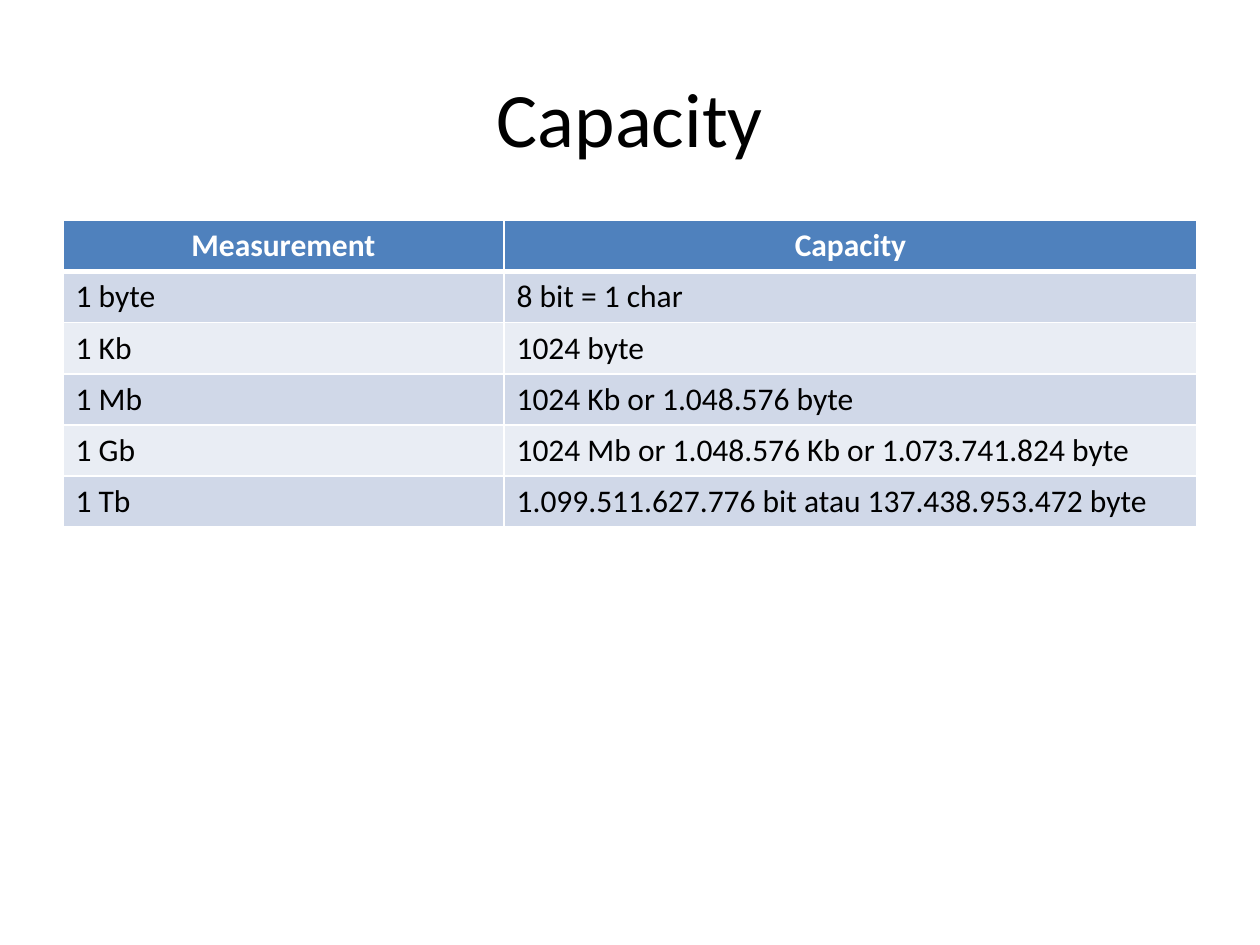
from lxml import etree
from pptx import Presentation
from pptx.dml.color import RGBColor
from pptx.enum import text as t
from pptx.oxml.ns import qn
from pptx.util import Pt

ROWS = [
    ("Measurement", "Capacity"),
    ("1 byte", "8 bit = 1 char"),
    ("1 Kb", "1024 byte"),
    ("1 Mb", "1024 Kb or 1.048.576 byte"),
    ("1 Gb", "1024 Mb or 1.048.576 Kb or 1.073.741.824 byte"),
    ("1 Tb", "1.099.511.627.776 bit atau 137.438.953.472 byte"),
]
WIDTHS = (252, 396)
HIGH = 29.2


def style(par, size, color, bold=False):
    font = par.runs[0].font
    font.name, font.size, font.bold = "Calibri", Pt(size), bold
    font.color.rgb = RGBColor.from_string(color)


def edge(cell, side, width):
    """Draw a white border on one side (L, R, T or B) of a cell."""
    line = etree.SubElement(cell._tc.get_or_add_tcPr(), qn("a:ln" + side), w=str(Pt(width)))
    fill = etree.SubElement(line, qn("a:solidFill"))
    etree.SubElement(fill, qn("a:srgbClr"), val="FFFFFF")


prs = Presentation()
prs.slide_width, prs.slide_height = Pt(720), Pt(540)
slide = prs.slides.add_slide(prs.slide_layouts[6])

title = slide.shapes.add_textbox(Pt(36), Pt(21.6), Pt(648), Pt(90)).text_frame
title.word_wrap = True
title.vertical_anchor = t.MSO_ANCHOR.MIDDLE
title.text = "Capacity"
title.paragraphs[0].alignment = t.PP_ALIGN.CENTER
style(title.paragraphs[0], 44, "000000")

frame = slide.shapes.add_table(len(ROWS), len(WIDTHS), Pt(36), Pt(126),
                               Pt(sum(WIDTHS)), Pt(HIGH * len(ROWS)))
table = frame.table
for col, width in zip(table.columns, WIDTHS):
    col.width = Pt(width)

for r, words in enumerate(ROWS):
    table.rows[r].height = Pt(HIGH)
    head = r == 0
    fill = "4F81BD" if head else ("E9EDF4", "D0D8E8")[r % 2]
    for c, word in enumerate(words):
        cell = table.cell(r, c)
        cell.text = word
        par = cell.text_frame.paragraphs[0]
        par.alignment = t.PP_ALIGN.CENTER if head else t.PP_ALIGN.LEFT
        style(par, 18, "FFFFFF" if head else "000000", head)
        for side in "LRTB":
            thick = (r, side) in ((0, "B"), (1, "T"))
            edge(cell, side, 3 if thick else 1)
        cell.fill.solid()
        cell.fill.fore_color.rgb = RGBColor.from_string(fill)

prs.save("out.pptx")
